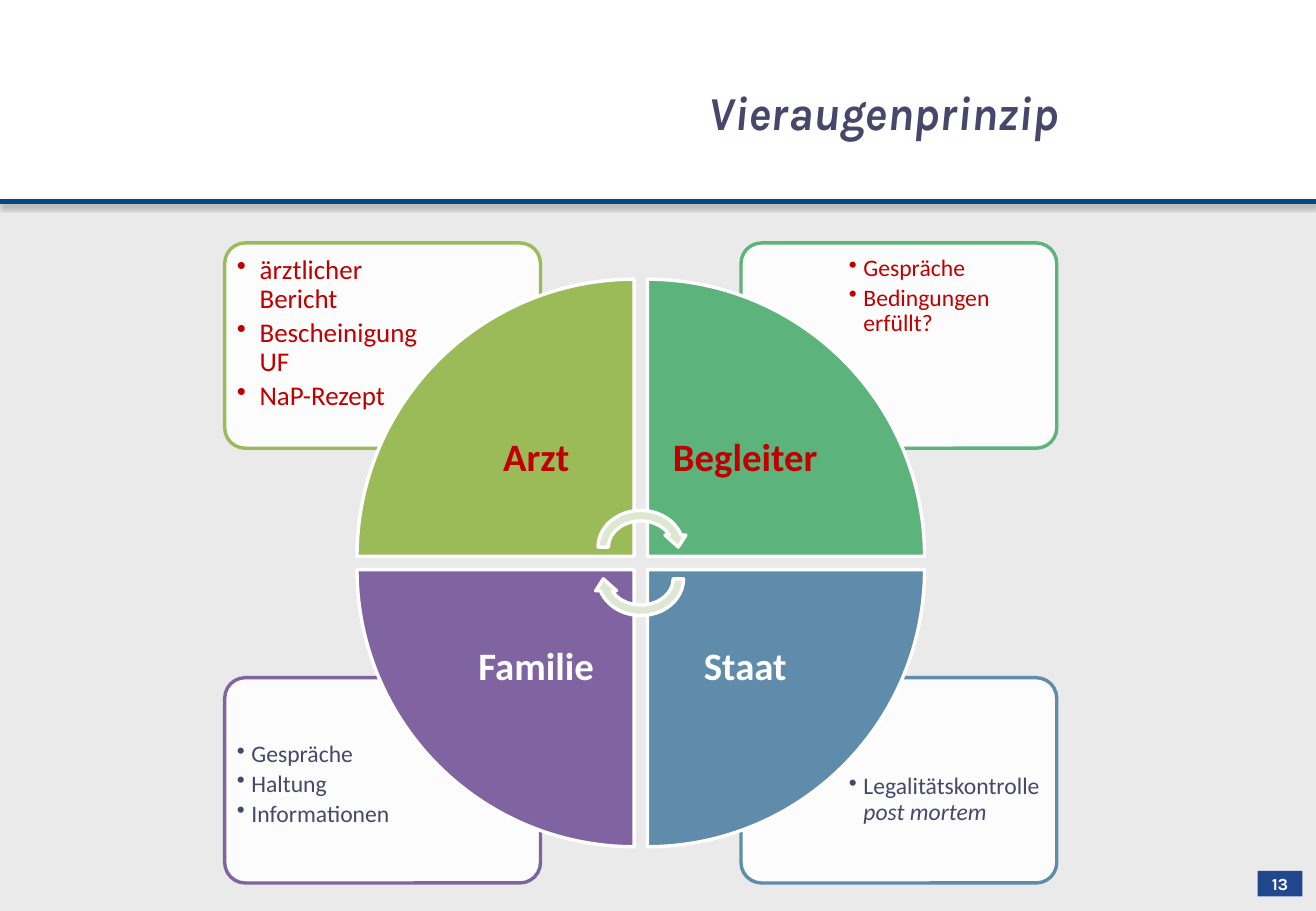
from lxml import etree
from pptx import Presentation
from pptx.dml.color import RGBColor
from pptx.enum import shapes, text
from pptx.oxml import ns
from pptx.util import Pt

# Content
TITLE = "Vieraugenprinzip"
PAGE_NUMBER = "13"
RED, INK, WHITE = "C00000", "47476B", "FFFFFF"

# Side and row are -1 (left, top) or 1 (right, bottom).
# Each item is (upright text, italic text).
QUADRANTS = [
    dict(label="Staat", side=1, row=1, turn=180, color="608CAB", label_color=WHITE,
         list_color=INK, size=14, indent=8.6, drop=19,
         items=[("Legalitätskontrolle ", "post mortem")]),
    dict(label="Familie", side=-1, row=1, turn=270, color="8064A2", label_color=WHITE,
         list_color=INK, size=14, indent=8.6, drop=0,
         items=[("Gespräche", ""), ("Haltung", ""), ("Informationen", "")]),
    dict(label="Begleiter", side=1, row=-1, turn=90, color="5CB37C", label_color=RED,
         list_color=RED, size=14, indent=8.6, drop=0,
         items=[("Gespräche", ""), ("Bedingungen erfüllt?", "")]),
    dict(label="Arzt", side=-1, row=-1, turn=0, color="9BBB59", label_color=RED,
         list_color=RED, size=16, indent=13.5, drop=0,
         items=[("ärztlicher Bericht", ""), ("Bescheinigung UF", ""), ("NaP-Rezept", "")]),
]

# Layout in points: gaps from the centre of the wheel, then width and height
WIDTH, HEIGHT = 780, 540
CENTER_X, CENTER_Y = 379.8, 333.7
CARD = (59.4, 68, 187.2, 121.7)
LIST = (118.4, 101.2, 126, 85.7)
WEDGE = (4, 4, 164.2, 164.2)
LABEL = (4, 4, 115.9, 115.9)
ARROW_W, ARROW_H, ARROW_SHIFT = 56.9, 49.7, 9.4
RULE_Y = 119.5


def rgb(value):
    return RGBColor.from_string(value)


def place(quadrant, gap_x, gap_y, width, height):
    """Mirror a box into its quadrant around the centre of the wheel."""
    left = CENTER_X + (gap_x if quadrant["side"] > 0 else -gap_x - width)
    top = CENTER_Y + (gap_y if quadrant["row"] > 0 else -gap_y - height)
    return left, top, width, height


def add_shape(kind, area, fill, line=None, turn=0):
    shape = page.shapes.add_shape(kind, *map(Pt, area))
    shape.shadow.inherit = False
    shape.rotation = turn
    shape.fill.solid()
    shape.fill.fore_color.rgb = rgb(fill)
    if line:
        shape.line.color.rgb = rgb(line)
        shape.line.width = Pt(2)
    else:
        shape.line.fill.background()
    return shape


def set_frame(box, inset, anchor=text.MSO_ANCHOR.TOP, wrap=True):
    frame = box.text_frame
    frame.word_wrap = wrap
    frame.vertical_anchor = anchor
    frame.margin_left = frame.margin_right = Pt(inset)
    frame.margin_top = frame.margin_bottom = Pt(inset)
    return frame


def set_font(para, name, size, color, bold=False, italic=False):
    font = para.font
    font.name, font.size, font.bold, font.italic = name, Pt(size), bold, italic
    font.color.rgb = rgb(color)


def add_text(area, inset, anchor=text.MSO_ANCHOR.TOP, wrap=True):
    return set_frame(page.shapes.add_textbox(*map(Pt, area)), inset, anchor, wrap)


def add_list(quadrant):
    left, top, width, height = place(quadrant, *LIST)
    drop, size = quadrant["drop"], quadrant["size"]
    frame = add_text((left, top + drop, width, height - drop), 5)
    for index, (upright, italic) in enumerate(quadrant["items"]):
        para = frame.add_paragraph() if index else frame.paragraphs[0]
        props = para._p.get_or_add_pPr()
        props.set("marL", str(Pt(quadrant["indent"])))
        props.set("indent", str(-Pt(quadrant["indent"])))
        etree.SubElement(props, ns.qn("a:buChar")).set("char", "•")
        para.line_spacing = 0.9
        para.space_after = Pt(round(size * 0.18, 1))
        set_font(para, "Calibri", size, quadrant["list_color"])
        para.add_run().text = upright
        if italic:
            span = para.add_run()
            span.text = italic
            span.font.italic = True


deck = Presentation()
deck.slide_width, deck.slide_height = Pt(WIDTH), Pt(HEIGHT)
page = deck.slides.add_slide(deck.slide_layouts[6])
page.background.fill.solid()
page.background.fill.fore_color.rgb = rgb(WHITE)

# Grey body and the rule above it
RECT = shapes.MSO_SHAPE.RECTANGLE
add_shape(RECT, (0, RULE_Y, WIDTH, HEIGHT - RULE_Y), "EAEAEA")
rule = page.shapes.add_connector(
    shapes.MSO_CONNECTOR.STRAIGHT, 0, Pt(RULE_Y), Pt(WIDTH), Pt(RULE_Y))
rule.line.color.rgb = rgb("004A80")
rule.line.width = Pt(3)
effects = etree.SubElement(rule._element.spPr, ns.qn("a:effectLst"))
shadow = etree.SubElement(effects, ns.qn("a:outerShdw"), blurRad=str(Pt(3.1)),
                          dist=str(Pt(1.8)), dir="5400000", rotWithShape="0")
shade = etree.SubElement(shadow, ns.qn("a:srgbClr"), val="000000")
etree.SubElement(shade, ns.qn("a:alpha"), val="35000")

# Page number
badge = add_shape(RECT, (745.4, 516.2, 26.6, 15.1), "21488F")
para = set_frame(badge, 0, text.MSO_ANCHOR.MIDDLE).paragraphs[0]
para.text = PAGE_NUMBER
para.alignment = text.PP_ALIGN.CENTER
set_font(para, "Karla", 10, WHITE, bold=True)

# Cards with lists
for quadrant in QUADRANTS:
    card = add_shape(shapes.MSO_SHAPE.ROUNDED_RECTANGLE, place(quadrant, *CARD),
                     WHITE, quadrant["color"])
    card.adjustments[0] = 0.1
    fill_color = card._element.spPr.find(ns.qn("a:solidFill"))[0]
    etree.SubElement(fill_color, ns.qn("a:alpha"), val="90000")
    add_list(quadrant)

# Wheel with labels
for quadrant in reversed(QUADRANTS):
    add_shape(shapes.MSO_SHAPE.PIE_WEDGE, place(quadrant, *WEDGE),
              quadrant["color"], WHITE, quadrant["turn"])
    para = add_text(place(quadrant, *LABEL), 13, text.MSO_ANCHOR.MIDDLE).paragraphs[0]
    para.text = quadrant["label"]
    para.alignment = text.PP_ALIGN.CENTER
    para.line_spacing = 0.9
    set_font(para, "Calibri", 23, quadrant["label_color"], bold=True)

# Arrows in the hub
for row, turn in ((-1, 0), (1, 180)):
    add_shape(shapes.MSO_SHAPE.CIRCULAR_ARROW,
              (CENTER_X - ARROW_W / 2, CENTER_Y + row * ARROW_SHIFT - ARROW_H / 2,
               ARROW_W, ARROW_H), "DEE7D1", WHITE, turn)

# Title
para = add_text((416.5, 46, 277.5, 41), 3.6).paragraphs[0]
para.text = TITLE
set_font(para, "Karla", 28, INK, bold=True, italic=True)
para.alignment = text.PP_ALIGN.LEFT

deck.save("out.pptx")
